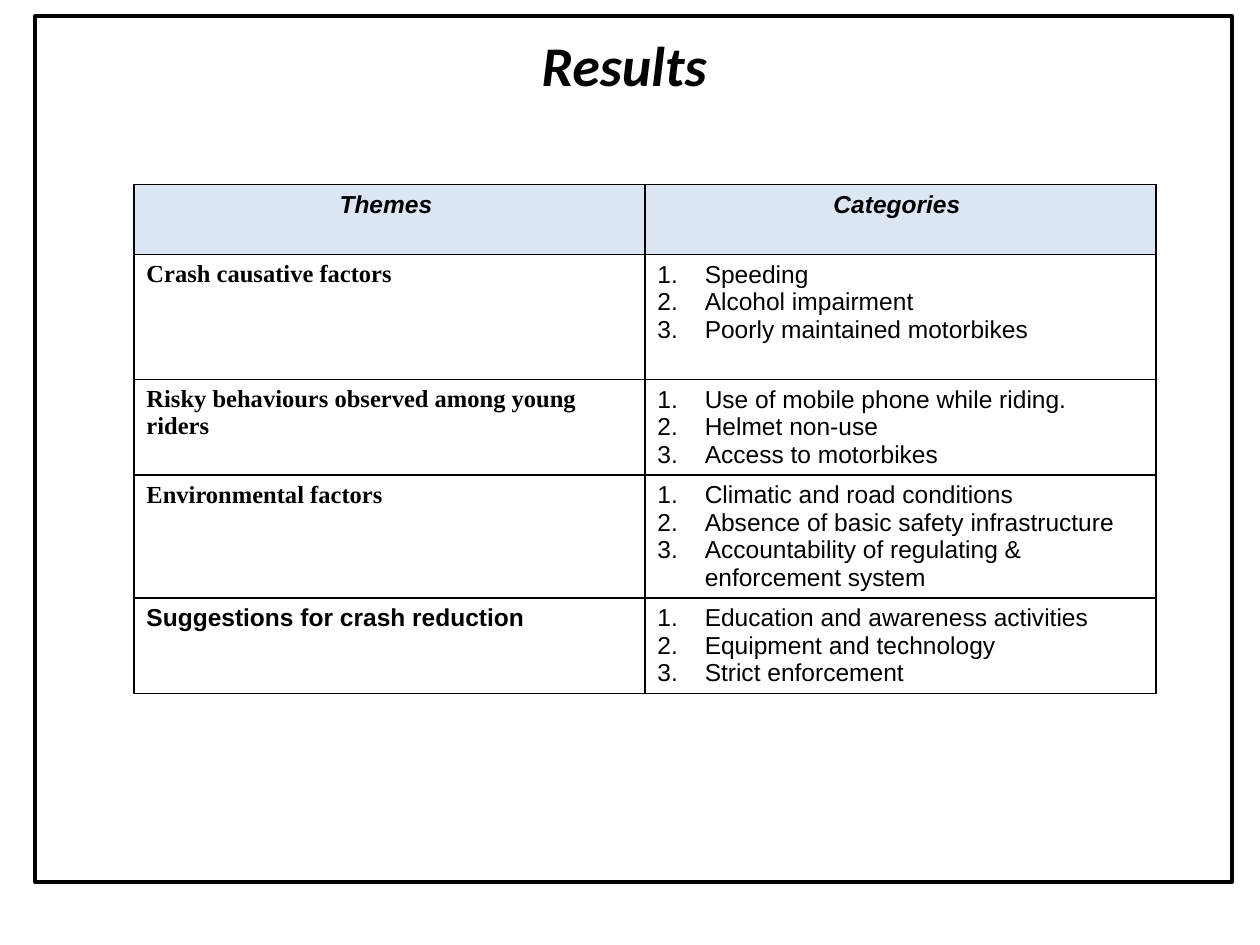
from dataclasses import dataclass

import pptx
import pptx.dml.color
import pptx.enum.shapes
import pptx.enum.text
import pptx.oxml
import pptx.oxml.ns
import pptx.util

Pt = pptx.util.Pt
Align = pptx.enum.text.PP_ALIGN


@dataclass(frozen=True)
class Theme:
    ink: str = "000000"
    header_fill: str = "DCE6F2"
    title_font: str = "Calibri"
    body_font: str = "Arial"
    theme_font: str = "Times New Roman"
    title_size: float = 32
    body_size: float = 14
    frame_width: float = 2.25
    border_width: float = 1
    number_indent: float = 27


class SlideBuilder:
    """Draw styled elements on the current page."""

    def __init__(self, theme, page):
        self.theme = theme
        self.page = page

    def color(self, value):
        return pptx.dml.color.RGBColor.from_string(value)

    def format_text(self, frame, font, size, bold=False, italic=False, align=Align.LEFT):
        for para in frame.paragraphs:
            para.alignment = align
            for span in para.runs:
                span.font.name = font
                span.font.size = Pt(size)
                span.font.bold = bold
                span.font.italic = italic
                span.font.color.rgb = self.color(self.theme.ink)

    def frame(self, left, top, width, height):
        box = self.page.shapes.add_shape(
            pptx.enum.shapes.MSO_SHAPE.RECTANGLE, Pt(left), Pt(top), Pt(width), Pt(height))
        box.shadow.inherit = False
        box.fill.background()
        box.line.color.rgb = self.color(self.theme.ink)
        box.line.width = Pt(self.theme.frame_width)

    def title(self, text, left, top, width, height):
        box = self.page.shapes.title
        box.left, box.top, box.width, box.height = Pt(left), Pt(top), Pt(width), Pt(height)
        box.text_frame.text = text
        box.text_frame.vertical_anchor = pptx.enum.text.MSO_ANCHOR.MIDDLE
        self.format_text(box.text_frame, self.theme.title_font, self.theme.title_size,
                         bold=True, italic=True, align=Align.CENTER)

    def borders(self, cell):
        properties = cell._tc.get_or_add_tcPr()
        for side in ("lnL", "lnR", "lnT", "lnB"):
            properties.append(pptx.oxml.parse_xml(
                f'<a:{side} {pptx.oxml.ns.nsdecls("a")} w="{Pt(self.theme.border_width)}">'
                f'<a:solidFill><a:srgbClr val="{self.theme.ink}"/></a:solidFill></a:{side}>'))

    def number(self, para):
        properties = para._p.get_or_add_pPr()
        indent = Pt(self.theme.number_indent)
        properties.set("marL", str(indent))
        properties.set("indent", str(-indent))
        properties.append(pptx.oxml.parse_xml(
            f'<a:buAutoNum {pptx.oxml.ns.nsdecls("a")} type="arabicPeriod"/>'))

    def cell(self, cell, text, font, fill=None, numbered=False, **style):
        self.borders(cell)
        if fill:
            cell.fill.solid()
            cell.fill.fore_color.rgb = self.color(fill)
        else:
            cell.fill.background()
        cell.text_frame.text = text
        if numbered:
            for para in cell.text_frame.paragraphs:
                self.number(para)
        self.format_text(cell.text_frame, font, self.theme.body_size, **style)

    def table(self, headers, rows, left, top, width, heights):
        table = self.page.shapes.add_table(
            len(heights), len(headers), Pt(left), Pt(top), Pt(width), Pt(sum(heights))).table
        table.first_row = table.horz_banding = False
        for row, height in zip(table.rows, heights):
            row.height = Pt(height)
        for column, header in enumerate(headers):
            self.cell(table.cell(0, column), header, self.theme.body_font,
                      fill=self.theme.header_fill, bold=True, italic=True, align=Align.CENTER)
        for index, (name, font, categories) in enumerate(rows, start=1):
            self.cell(table.cell(index, 0), name, font, bold=True)
            self.cell(table.cell(index, 1), "\n".join(categories),
                      self.theme.body_font, numbered=True)


def main():
    theme = Theme()
    deck = pptx.Presentation()
    deck.slide_width, deck.slide_height = Pt(720), Pt(540)
    builder = SlideBuilder(theme, deck.slides.add_slide(deck.slide_layouts[5]))
    builder.frame(20.16, 9.36, 684, 494.64)
    builder.title("Results ", 20.16, 15.12, 680.4, 43.2)
    rows = [
        ("Crash causative factors", theme.theme_font,
         ["Speeding", "Alcohol impairment", "Poorly maintained motorbikes"]),
        ("Risky behaviours observed among young riders", theme.theme_font,
         ["Use of mobile phone while riding.", "Helmet non-use", "Access to motorbikes"]),
        ("Environmental factors", theme.theme_font,
         ["Climatic and road conditions", "Absence of basic safety infrastructure",
          "Accountability of regulating & enforcement system"]),
        ("Suggestions for crash reduction", theme.body_font,
         ["Education and awareness activities", "Equipment and technology",
          "Strict enforcement"]),
    ]
    builder.table(["Themes ", "Categories "], rows, 76.5, 105.5, 584,
                  [40, 71.5, 54.5, 70.25, 54.5])
    deck.save("out.pptx")


if __name__ == "__main__":
    main()
